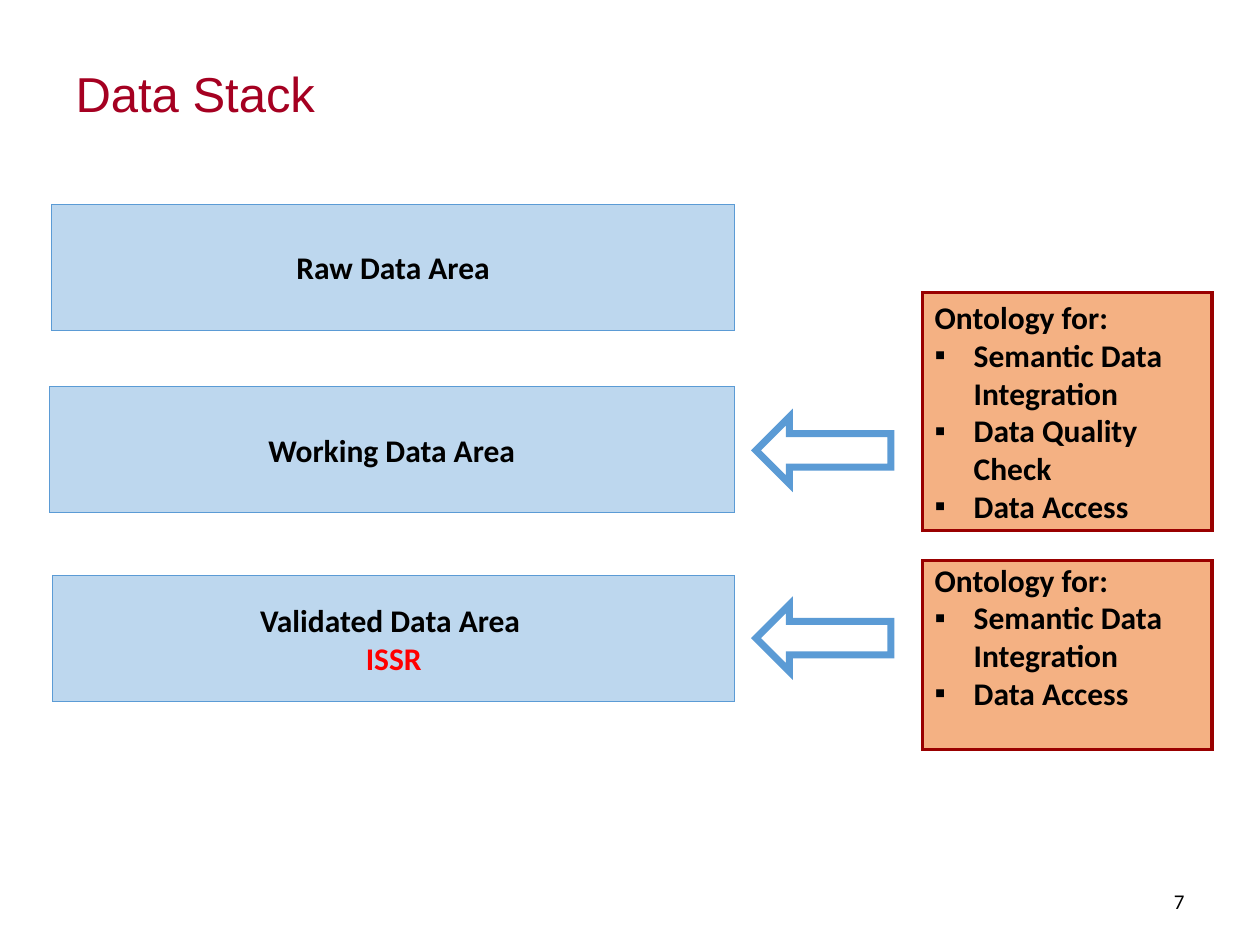
from dataclasses import dataclass
from lxml.etree import SubElement
from pptx import Presentation
from pptx.dml.color import RGBColor
from pptx.enum.shapes import MSO_SHAPE
from pptx.enum.text import MSO_ANCHOR, PP_ALIGN
from pptx.oxml.ns import qn
from pptx.util import Inches, Pt


@dataclass(frozen=True)
class Theme:
    head: str = "Arial"
    body: str = "Calibri"
    title: str = "A50021"
    ink: str = "000000"
    alert: str = "FF0000"
    area: str = "BDD7EE"
    edge: str = "5B9BD5"
    note: str = "F4B183"
    frame: str = "990000"
    big: int = 28
    mid: int = 18
    small: int = 12


class Deck:
    def __init__(self, theme):
        self.theme = theme
        self.prs = Presentation()
        self.prs.slide_width = Inches(10)
        self.prs.slide_height = Inches(7.5)
        self.slide = self.prs.slides.add_slide(self.prs.slide_layouts[5])

    def font(self, para, size, color, name=None, bold=False):
        font = para.font
        font.name = name or self.theme.body
        font.size = Pt(size)
        font.bold = bold
        font.color.rgb = RGBColor.from_string(color)

    def title(self, text, box):
        shape = self.slide.shapes.title
        shape.left, shape.top, shape.width, shape.height = map(Inches, box)
        frame = shape.text_frame
        frame.text = text
        frame.vertical_anchor = MSO_ANCHOR.MIDDLE
        para = frame.paragraphs[0]
        para.alignment = PP_ALIGN.LEFT
        para.line_spacing = 0.9
        self.font(para, self.theme.big, self.theme.title, self.theme.head)

    def number(self, text, box):
        frame = self.slide.shapes.add_textbox(*map(Inches, box)).text_frame
        frame.word_wrap = True
        frame.vertical_anchor = MSO_ANCHOR.MIDDLE
        para = frame.paragraphs[0]
        para.text = text
        para.alignment = PP_ALIGN.RIGHT
        self.font(para, self.theme.small, self.theme.ink)

    def shape(self, kind, box, line, width, fill=None):
        shape = self.slide.shapes.add_shape(kind, *map(Inches, box))
        shape.shadow.inherit = False
        if fill:
            shape.fill.solid()
            shape.fill.fore_color.rgb = RGBColor.from_string(fill)
        else:
            shape.fill.background()
        shape.line.color.rgb = RGBColor.from_string(line)
        shape.line.width = Pt(width)
        # Sharp corners
        SubElement(shape.line.fill._xPr, qn("a:miter"), lim="800000")
        return shape

    def area(self, box, lines):
        theme = self.theme
        shape = self.shape(MSO_SHAPE.RECTANGLE, box, theme.edge, 0.5, theme.area)
        frame = shape.text_frame
        frame.text = "\n".join(lines)
        for para, color in zip(frame.paragraphs, (theme.ink, theme.alert)):
            para.alignment = PP_ALIGN.CENTER
            self.font(para, theme.mid, color, bold=True)

    def note(self, box, head, items, top=False):
        theme = self.theme
        shape = self.shape(MSO_SHAPE.RECTANGLE, box, theme.frame, 2, theme.note)
        frame = shape.text_frame
        frame.text = "\n".join([head, *items])
        if top:
            frame.vertical_anchor = MSO_ANCHOR.TOP
            frame.margin_top = 0
        for rank, para in enumerate(frame.paragraphs):
            para.alignment = PP_ALIGN.LEFT
            if rank:
                self.bullet(para)
            self.font(para, theme.mid, theme.ink, bold=True)

    def bullet(self, para):
        props = para._p.get_or_add_pPr()
        props.set("marL", str(Inches(0.31)))
        props.set("indent", str(-Inches(0.31)))
        SubElement(props, qn("a:buFont"), typeface=self.theme.head)
        SubElement(props, qn("a:buChar"), char="▪")

    def arrow(self, box):
        self.shape(MSO_SHAPE.LEFT_ARROW, box, self.theme.edge, 4)


def main():
    deck = Deck(Theme())
    deck.title("Data Stack", (0.5, 0.3, 9, 0.93))
    deck.number("7", (7.17, 6.95, 2.33, 0.4))

    # Data areas, all ending at the same right edge
    right = 5.83
    for left, top, lines in (
        (0.41, 1.62, ["Raw Data Area"]),
        (0.39, 3.07, ["Working Data Area"]),
        (0.42, 4.57, ["Validated Data Area ", "ISSR"]),
    ):
        deck.area((left, top, right - left, 1), lines)

    # Ontology notes
    head, first, last = "Ontology for:", "Semantic Data Integration", "Data Access"
    deck.note((7.32, 2.32, 2.3, 1.89), head, [first, "Data Quality Check", last])
    deck.note((7.32, 4.45, 2.3, 1.5), head, [first, last], top=True)

    # Arrows from notes to areas
    for top in (3.31, 4.8):
        deck.arrow((6, top, 1.07, 0.53))

    deck.prs.save("out.pptx")


if __name__ == "__main__":
    main()
